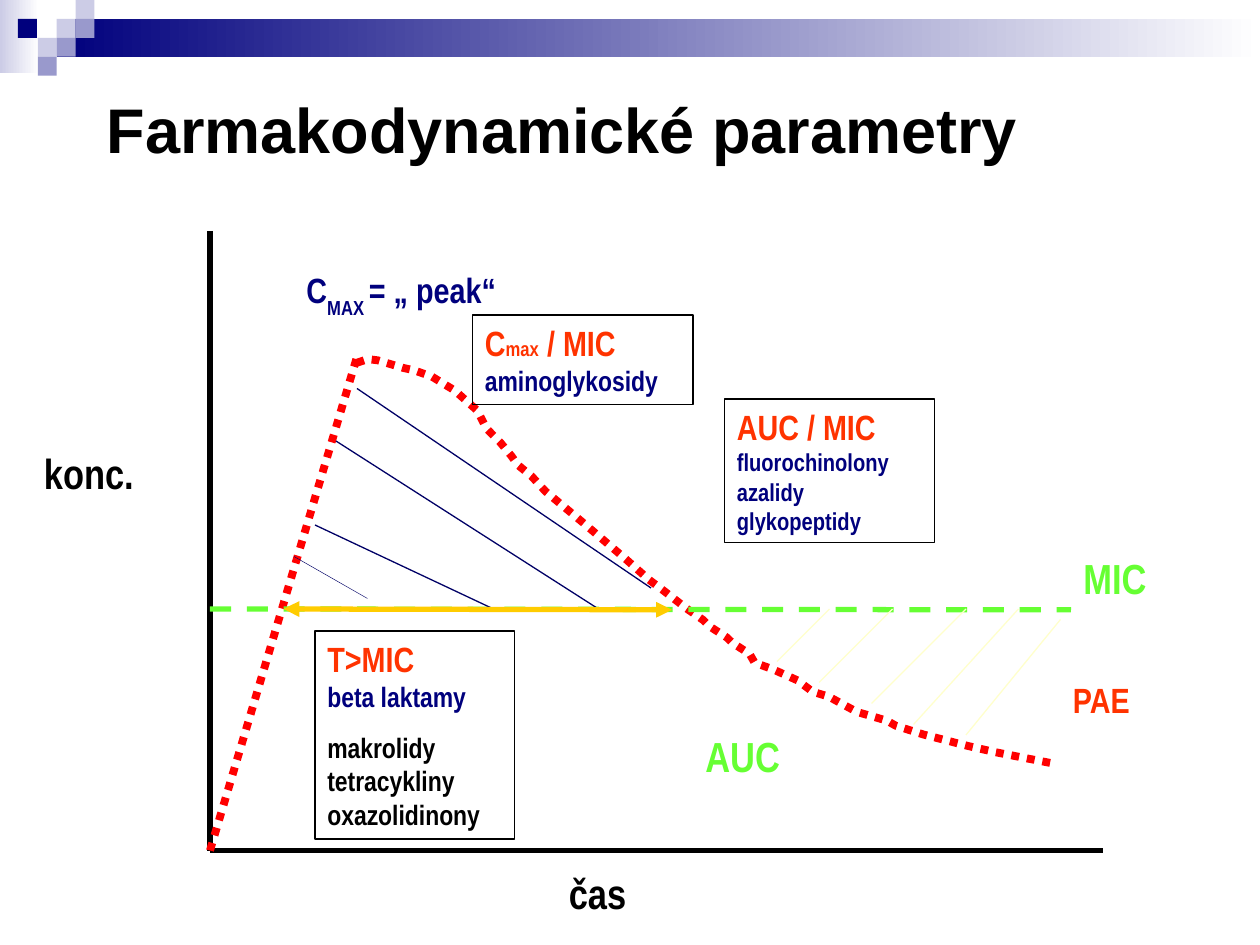
"""Builds the slide on pharmacodynamic parameters: a concentration curve over time with labels."""
from lxml import etree
from pptx import Presentation, util as u
from pptx.dml.color import RGBColor
from pptx.enum import dml, shapes, text
from pptx.oxml.ns import qn

BLACK, WHITE = RGBColor(0, 0, 0), RGBColor(255, 255, 255)
NAVY, INK = RGBColor(0, 0, 0x7D), RGBColor(0, 0, 0x66)
LILAC, VIOLET = RGBColor(0xCC, 0xCC, 0xE6), RGBColor(0x99, 0x99, 0xCC)
RED, ORANGE = RGBColor(255, 0, 0), RGBColor(255, 0x33, 0)
GREEN, GOLD = RGBColor(0x66, 255, 0x33), RGBColor(255, 0xCC, 0)
CREAM = RGBColor(255, 255, 0xCC)
DOT, DASH = dml.MSO_LINE.ROUND_DOT, dml.MSO_LINE.DASH

COLUMNS = 120
SLIDE_W, SLIDE_H = u.Inches(10), u.Inches(7.5)
CELL = SLIDE_W / COLUMNS
TILE = 0.15

BANDS = [((0, 0, 0.31, 0.58), LILAC), ((0.45, 0.15, 9.55, 0.3), NAVY)]
TILES = [(3, 1, LILAC), (4, 0, LILAC), (4, 1, VIOLET), (2, 2, LILAC),
         (0.95, 1, NAVY), (3, 2, VIOLET), (2, 3, VIOLET)]

AXES = [(20, 81, 105, 81), (20, 22, 20, 81)]
RISE = (20, 81, 34, 34)
MIC_LEVEL = (20, 58, 102, 58.08)
TIME_ABOVE_MIC = (27, 58, 64, 58.08)
AUC_HATCH = [(30, 50, 47, 58), (32, 42, 57, 58), (34, 37, 62, 56)]
AUC_HATCH_SHORT = (28, 53, 35, 57)
PAE_HATCH = [(79, 58, 74, 63), (85, 58, 78, 65), (92, 58, 83, 67),
             (97, 58, 87, 69), (101, 59, 92, 70)]
DECLINE = [(283, 288), (292, 285), (300, 286), (320, 292), (329, 294), (343, 299),
           (361, 310), (379, 326), (386, 340), (397, 351), (406, 362), (411, 369),
           (422, 378), (433, 390), (463, 415), (497, 444), (515, 460), (527, 469),
           (545, 483), (558, 492), (563, 497), (577, 506), (581, 510), (595, 519),
           (599, 526), (613, 531), (633, 540), (645, 549), (658, 553), (680, 565),
           (704, 572), (711, 576), (733, 583), (768, 592), (790, 597), (836, 606)]

LABELS = [
    ((28, 25, 26, 5.2), [[("C", 20, NAVY), ("MAX ", 20, NAVY, -33), ("= „ peak“", 20, NAVY)]]),
    ((102, 52, 11, 6), [[("MIC", 24, GREEN)]]),
    ((53, 82, 24, 6), [[("čas", 24, BLACK)]]),
    ((3, 42, 14, 6), [[("konc.", 24, BLACK)]]),
    ((101, 64, 15, 5.2), [[("PAE", 20, ORANGE)]]),
    ((66, 69, 13, 6), [[("AUC", 24, GREEN)]]),
]
TITLE = ((9, 8, 99, 8.4), [[("Farmakodynamické parametry", 36, BLACK)]])
BOXES = [
    ((45, 30, 21, 8.5), [[("C", 20, ORANGE), ("max", 20, ORANGE, -1), (" / MIC", 20, ORANGE)],
                         [("aminoglykosidy", 16, NAVY)]], None),
    ((69, 38, 20, 13.7), [[("AUC / MIC", 20, ORANGE)], [("fluorochinolony", 14, NAVY)],
                          [("azalidy", 14, NAVY)], [("glykopeptidy", 14, NAVY)]], None),
    ((30, 60.1, 19, 19.8), [[("T>MIC", 20, ORANGE)], [("beta laktamy", 16, NAVY)],
                            [("makrolidy", 16, BLACK)], [("tetracykliny", 16, BLACK)],
                            [("oxazolidinony", 16, BLACK)]], 2),
]


def cells(place):
    return [round(n * CELL) for n in place]


def add_text(slide, place, lines, font="Arial Narrow", border=None, gap_before=None):
    label = slide.shapes.add_textbox(*cells(place))
    if border is not None:
        label.line.color.rgb = border
        label.line.width = u.Pt(0.75)
    frame = label.text_frame
    frame.word_wrap = True
    frame.vertical_anchor = text.MSO_ANCHOR.TOP
    for row, line in enumerate(lines):
        paragraph = frame.add_paragraph() if row else frame.paragraphs[0]
        if row == gap_before:
            paragraph.space_before = u.Pt(10)
        for words, size, color, *baseline in line:
            run = paragraph.add_run()
            run.text = words
            run.font.name, run.font.size, run.font.bold = font, u.Pt(size), True
            run.font.color.rgb = color
            if baseline:
                run.font._element.set("baseline", str(baseline[0] * 1000))


def style_line(line, color, width, dash=None):
    line.color.rgb = color
    line.width = u.Pt(width)
    if dash is not None:
        line.dash_style = dash


def add_line(slide, ends, color, width, dash=None, arrows=False):
    line = slide.shapes.add_connector(shapes.MSO_CONNECTOR.STRAIGHT, *cells(ends))
    style_line(line.line, color, width, dash)
    properties = line._element.spPr
    if arrows:
        for end in ("a:headEnd", "a:tailEnd"):
            etree.SubElement(properties.find(qn("a:ln")), qn(end), type="triangle")
    etree.SubElement(properties, qn("a:effectLst"))


def add_block(slide, place, color, fades=False):
    block = slide.shapes.add_shape(shapes.MSO_SHAPE.RECTANGLE, *map(u.Inches, place))
    block.shadow.inherit = False
    block.line.fill.background()
    if fades:
        block.fill.gradient()
        block.fill.gradient_angle = 0
        for stop, shade in zip(block.fill.gradient_stops, (color, WHITE)):
            stop.color.rgb = shade
    else:
        block.fill.solid()
        block.fill.fore_color.rgb = color


def add_decline(slide):
    builder = slide.shapes.build_freeform(*DECLINE[0], scale=u.Inches(0.01))
    builder.add_line_segments(DECLINE[1:], close=False)
    curve = builder.convert_to_shape()
    curve.shadow.inherit = False
    curve.fill.background()
    style_line(curve.line, RED, 4.5, DOT)


def main():
    deck = Presentation()
    deck.slide_width, deck.slide_height = SLIDE_W, SLIDE_H
    slide = deck.slides.add_slide(deck.slide_layouts[6])
    for place, color in BANDS:
        add_block(slide, place, color, fades=True)
    for column, row, color in TILES:
        add_block(slide, (column * TILE, row * TILE, TILE, TILE), color)
    for axis in AXES:
        add_line(slide, axis, BLACK, 3)
    add_line(slide, RISE, RED, 4.5, DOT)
    add_decline(slide)
    add_line(slide, MIC_LEVEL, GREEN, 3, DASH)
    add_line(slide, AUC_HATCH_SHORT, INK, 0.25)
    for stroke in AUC_HATCH:
        add_line(slide, stroke, INK, 0.75)
    add_line(slide, TIME_ABOVE_MIC, GOLD, 3, arrows=True)
    for stroke in PAE_HATCH:
        add_line(slide, stroke, CREAM, 0.75)
    for place, lines, gap_before in BOXES:
        add_text(slide, place, lines, border=BLACK, gap_before=gap_before)
    for place, lines in LABELS:
        add_text(slide, place, lines)
    add_text(slide, *TITLE, font="Arial")
    deck.save("out.pptx")


if __name__ == "__main__":
    main()
